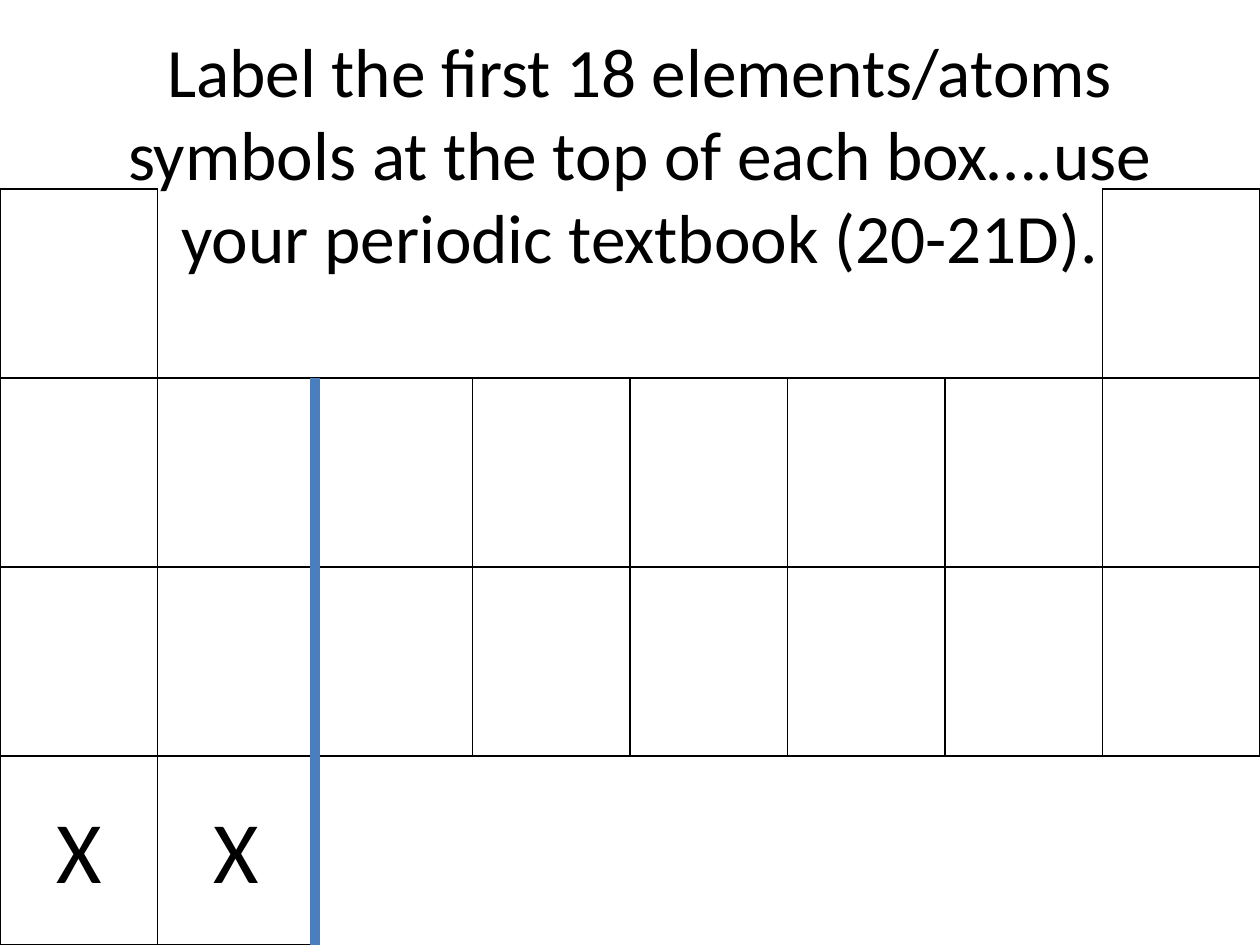
from dataclasses import dataclass
from itertools import product

from lxml.etree import SubElement
from pptx import Presentation
from pptx.dml.color import RGBColor
from pptx.enum.shapes import MSO_CONNECTOR
from pptx.enum.text import MSO_ANCHOR, MSO_AUTO_SIZE, PP_ALIGN
from pptx.oxml.ns import qn
from pptx.util import Inches, Pt


@dataclass(frozen=True)
class Theme:
    font: str = "Calibri"
    ink: str = "000000"
    divider: str = "4B7EBC"
    title_size: float = 39.6
    mark_size: float = 50
    border_width: float = 1
    divider_width: float = 6


THEME = Theme()
ROWS, COLUMNS = 4, 8
BOX_WIDTH, BOX_HEIGHT = 1.25, 1.5
TABLE_TOP = 1.5
PERIODS = [{0, 7}, set(range(COLUMNS)), set(range(COLUMNS)), {0, 1}]
CROSSED_OUT = {(3, 0), (3, 1)}
SIDES = {"L": (0, -1), "R": (0, 1), "T": (-1, 0), "B": (1, 0)}


def write(frame, text, size, color=THEME.ink, align=PP_ALIGN.CENTER):
    paragraph = frame.paragraphs[0]
    paragraph.alignment = align
    run = paragraph.add_run()
    run.text = text
    run.font.name = THEME.font
    run.font.size = Pt(size)
    run.font.color.rgb = RGBColor.from_string(color)


def add_title(slide, text):
    title = slide.shapes.title
    title.left, title.top = Inches(0.58), Inches(0.17)
    title.width, title.height = Inches(9), Inches(2.08)
    frame = title.text_frame
    frame.word_wrap = True
    frame.auto_size = MSO_AUTO_SIZE.NONE
    frame.vertical_anchor = MSO_ANCHOR.MIDDLE
    write(frame, text, THEME.title_size)


def is_box(row, column):
    return 0 <= row < ROWS and column in PERIODS[row]


def set_borders(cell, row, column):
    properties = cell._tc.get_or_add_tcPr()
    for side, (down, across) in SIDES.items():
        edge = SubElement(properties, qn(f"a:ln{side}"), w=str(Pt(THEME.border_width)))
        if is_box(row, column) or is_box(row + down, column + across):
            fill = SubElement(edge, qn("a:solidFill"))
            SubElement(fill, qn("a:srgbClr"), val=THEME.ink)
        else:
            SubElement(edge, qn("a:noFill"))


def add_element_grid(slide):
    grid = slide.shapes.add_table(
        ROWS, COLUMNS, Inches(0), Inches(TABLE_TOP),
        Inches(COLUMNS * BOX_WIDTH), Inches(ROWS * BOX_HEIGHT),
    ).table
    grid.first_row = False
    grid.horz_banding = False
    for row, column in product(range(ROWS), range(COLUMNS)):
        cell = grid.cell(row, column)
        set_borders(cell, row, column)
        cell.fill.background()
        if (row, column) in CROSSED_OUT:
            cell.margin_top = Inches(0.35)
            write(cell.text_frame, "X", THEME.mark_size)


def add_divider(slide, x, top, bottom):
    divider = slide.shapes.add_connector(
        MSO_CONNECTOR.STRAIGHT, Inches(x), Inches(top), Inches(x), Inches(bottom)
    )
    divider.line.color.rgb = RGBColor.from_string(THEME.divider)
    divider.line.width = Pt(THEME.divider_width)
    SubElement(divider._element.spPr, qn("a:effectLst"))


def main():
    presentation = Presentation()
    presentation.slide_width, presentation.slide_height = Inches(10), Inches(7.5)
    slide = presentation.slides.add_slide(presentation.slide_layouts[5])
    add_title(
        slide,
        "Label the first 18 elements/atoms symbols at the top of each box….use "
        "your periodic textbook (20-21D).",
    )
    add_element_grid(slide)
    add_divider(
        slide, 2 * BOX_WIDTH, TABLE_TOP + BOX_HEIGHT, TABLE_TOP + ROWS * BOX_HEIGHT
    )
    presentation.save("out.pptx")


if __name__ == "__main__":
    main()
